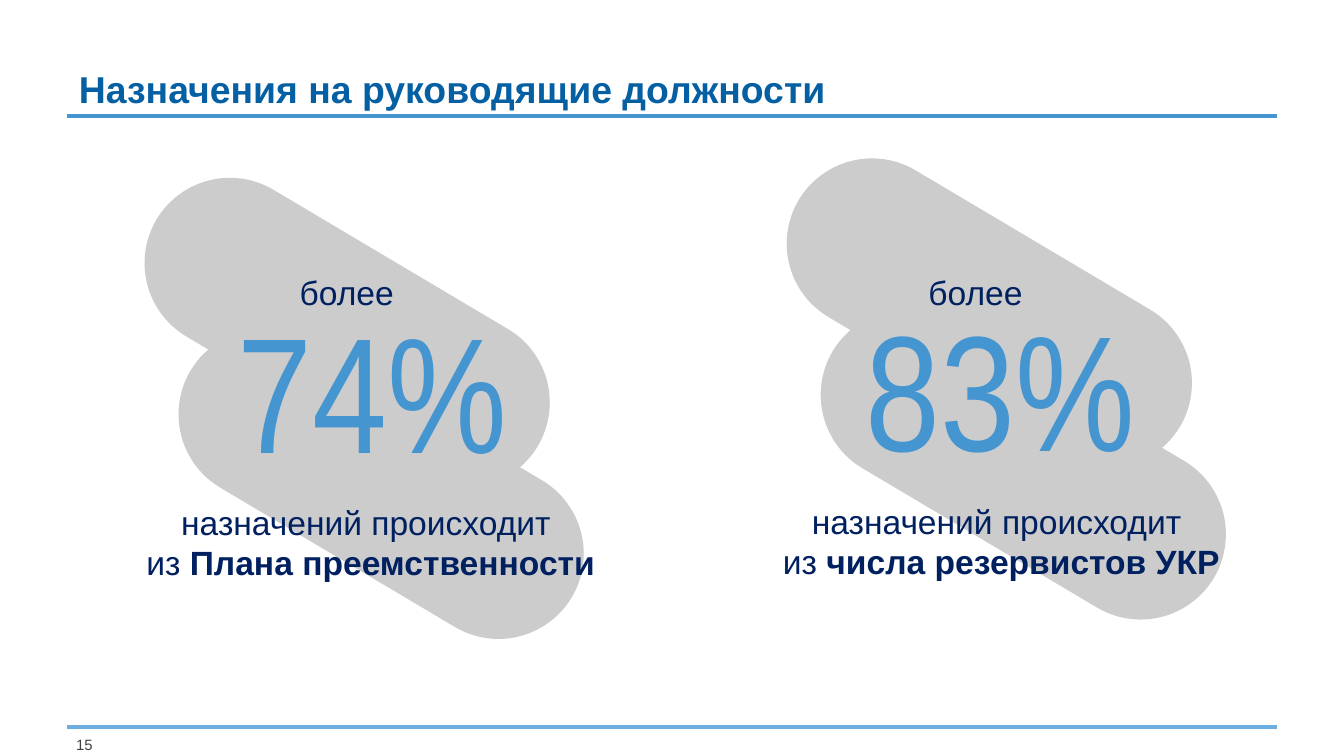
from dataclasses import dataclass

from lxml.etree import SubElement
from pptx import Presentation
from pptx.dml.color import RGBColor
from pptx.enum.shapes import MSO_CONNECTOR, MSO_SHAPE
from pptx.enum.text import MSO_ANCHOR, MSO_AUTO_SIZE, PP_ALIGN
from pptx.oxml.ns import qn
from pptx.slide import Slide
from pptx.util import Pt

BLUE = RGBColor(0x45, 0x95, 0xD1)
LIGHT_BLUE = RGBColor(0x6C, 0xAE, 0xDF)
TITLE_BLUE = RGBColor(0x04, 0x5F, 0xA3)
NAVY = RGBColor(0x00, 0x20, 0x60)
PILL_GREY = RGBColor(0xCC, 0xCC, 0xCC)
NUMBER_GREY = RGBColor(0x41, 0x41, 0x42)

MARGIN = 36
SLIDE_WIDTH = 720
PILL_WIDTH, PILL_HEIGHT, PILL_ANGLE = 237.6, 91.4, 30.7
PILL_STEP = (18.2, 81)


@dataclass
class Box:
    left: float
    top: float
    width: float
    height: float


@dataclass
class Share:
    """One percentage with its caption and its pair of pills."""
    percent: str
    source: str
    pill_left: float
    pill_top: float
    more_box: Box
    percent_box: Box
    caption_box: Box


SHARES = [
    Share("74%", "Плана преемственности", 67.2, 132.6,
          Box(153.4, 142.1, 65.5, 28.8), Box(120.2, 151.2, 158.4, 113.8),
          Box(67.9, 265.4, 261.4, 51.1)),
    Share("83%", "числа резервистов УКР", 411.2, 122.2,
          Box(490.3, 142.1, 65.5, 28.8), Box(456.5, 150.5, 171.4, 113.8),
          Box(411.1, 264.8, 250.6, 51.1)),
]


def draw_rule(slide: Slide, top: float, color: RGBColor) -> None:
    rule = slide.shapes.add_connector(
        MSO_CONNECTOR.STRAIGHT, Pt(MARGIN), Pt(top), Pt(SLIDE_WIDTH - MARGIN), Pt(top))
    rule.line.color.rgb = color
    rule.line.width = Pt(2.25)
    SubElement(rule._element.spPr, qn("a:effectLst"))


def draw_pill(slide: Slide, left: float, top: float) -> None:
    pill = slide.shapes.add_shape(
        MSO_SHAPE.ROUNDED_RECTANGLE, Pt(left), Pt(top), Pt(PILL_WIDTH), Pt(PILL_HEIGHT))
    pill.adjustments[0] = 0.5
    pill.rotation = PILL_ANGLE
    pill.shadow.inherit = False
    pill.fill.solid()
    pill.fill.fore_color.rgb = PILL_GREY
    pill.line.fill.background()


def add_text(slide: Slide, box: Box, text: str, size: float, color: RGBColor,
             font_name: str = "Arial", wrap: bool = False):
    """Add a one-paragraph text box; return its frame and paragraph."""
    frame = slide.shapes.add_textbox(
        Pt(box.left), Pt(box.top), Pt(box.width), Pt(box.height)).text_frame
    frame.word_wrap = wrap
    if not wrap:
        frame.margin_right = 0  # room to keep the text on one line
    paragraph = frame.paragraphs[0]
    paragraph.add_run().text = text
    font = paragraph.font
    font.name, font.size = font_name, Pt(size)
    font.color.rgb = color
    return frame, paragraph


def draw_share(slide: Slide, share: Share) -> None:
    step_x, step_y = PILL_STEP
    for step in (1, 0):
        draw_pill(slide, share.pill_left + step * step_x, share.pill_top + step * step_y)

    add_text(slide, share.percent_box, share.percent, 88, BLUE, "Arial Narrow")
    add_text(slide, share.more_box, "более", 18, NAVY)

    _, caption = add_text(slide, share.caption_box, "назначений происходит ",
                          18, NAVY, wrap=True)
    caption.alignment = PP_ALIGN.CENTER
    caption.add_line_break()
    caption.add_run().text = "из "
    source = caption.add_run()
    source.text = share.source
    source.font.bold = True


def draw_title(slide: Slide, text: str) -> None:
    title = slide.shapes.title
    title.left, title.top, title.width, title.height = Pt(MARGIN), Pt(16.2), Pt(559.4), Pt(46.8)
    frame = title.text_frame
    frame.text = text
    frame.auto_size = MSO_AUTO_SIZE.NONE
    frame.vertical_anchor = MSO_ANCHOR.BOTTOM
    frame.margin_left = frame.margin_right = Pt(6.3)
    frame.margin_top = frame.margin_bottom = Pt(3.2)
    heading = frame.paragraphs[0]
    heading.alignment = PP_ALIGN.LEFT
    heading.line_spacing = 0.9
    heading.font.name, heading.font.size, heading.font.bold = "Arial", Pt(20), True
    heading.font.color.rgb = TITLE_BLUE


def draw_page_number(slide: Slide, number: str) -> None:
    frame, paragraph = add_text(slide, Box(MARGIN, 394, 13.7, 8), number, 8, NUMBER_GREY)
    frame.margin_left = frame.margin_right = frame.margin_top = frame.margin_bottom = 0
    paragraph.alignment = PP_ALIGN.RIGHT


def main() -> None:
    prs = Presentation()
    prs.slide_width, prs.slide_height = Pt(SLIDE_WIDTH), Pt(405)
    slide = prs.slides.add_slide(prs.slide_layouts[5])

    # Frame: footer and title rules, page number, title
    draw_rule(slide, 389.5, LIGHT_BLUE)
    draw_rule(slide, 62.3, BLUE)
    draw_page_number(slide, "15")
    draw_title(slide, "Назначения на руководящие должности")

    # The two shares
    for share in SHARES:
        draw_share(slide, share)

    prs.save("out.pptx")


if __name__ == "__main__":
    main()
